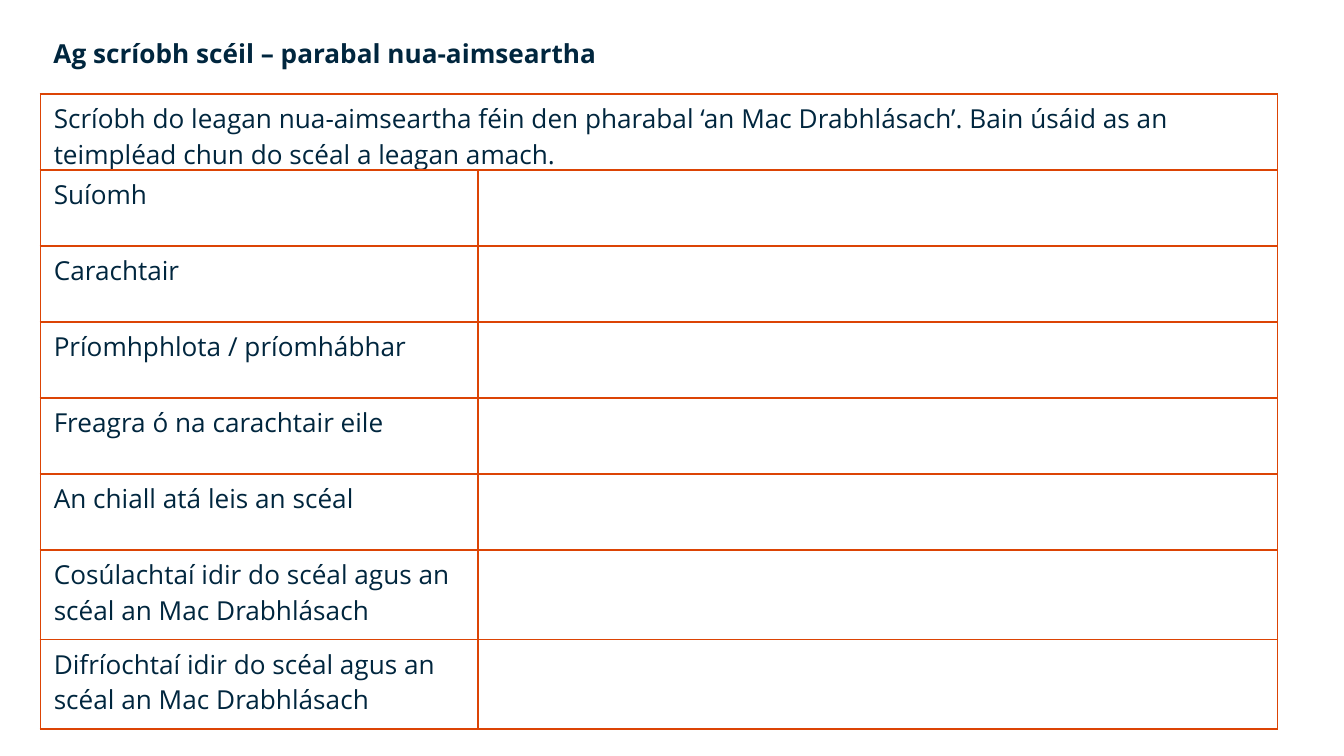
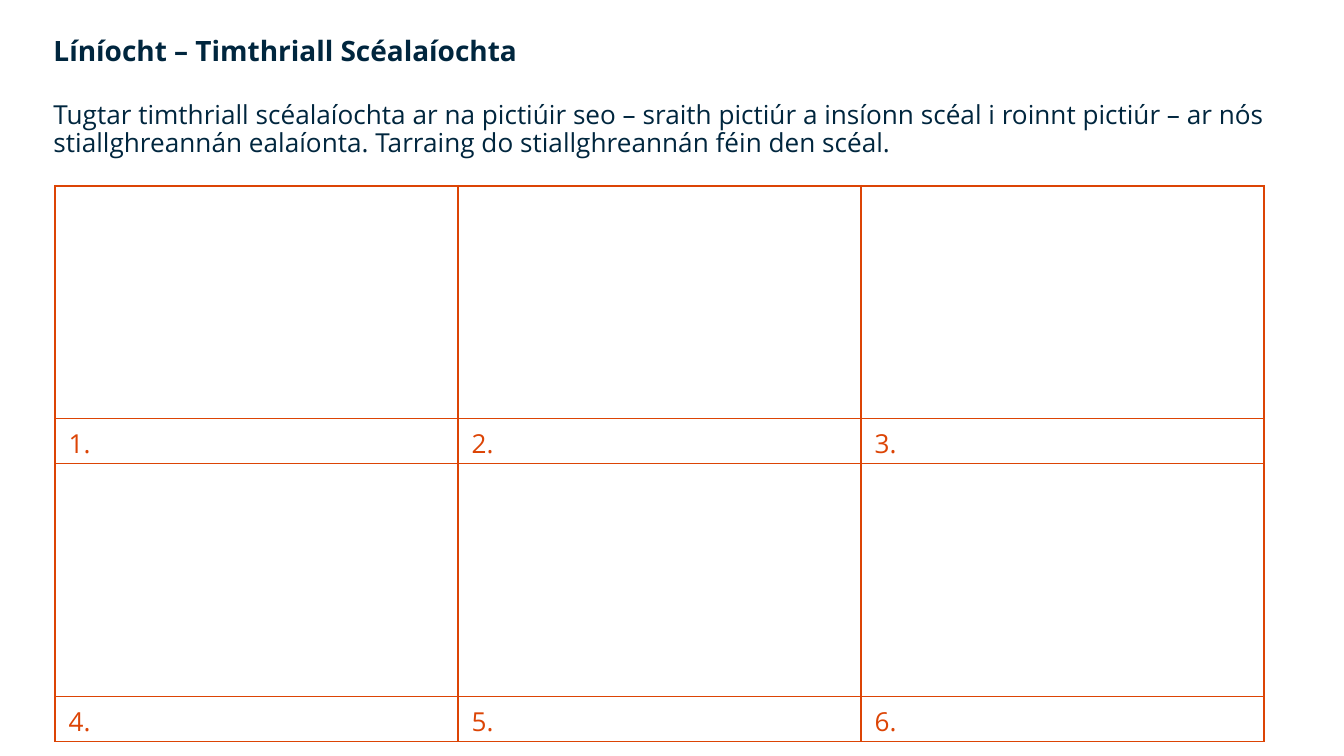
from dataclasses import dataclass

from lxml import etree
from pptx import Presentation
from pptx import util as u
from pptx.dml.color import RGBColor
from pptx.enum import text
from pptx.oxml.ns import qn


@dataclass(frozen=True)
class Theme:
    font: str = "Open Sans"
    navy: str = "00263E"
    orange: str = "DC4405"
    body: float = 14
    cycle_title: float = 15
    border: float = 1


theme = Theme()


def style_text(paragraph, size, color, bold=False):
    for run in paragraph.runs:
        run.font.name = theme.font
        run.font.size = u.Pt(size)
        run.font.bold = bold
        run.font.color.rgb = RGBColor.from_string(color)


def add_grid(slide, left, top, column_widths, row_heights, labels, color):
    table = slide.shapes.add_table(
        len(row_heights), len(column_widths), u.Pt(left), u.Pt(top),
        u.Pt(sum(column_widths)), u.Pt(sum(row_heights))).table
    table.first_row = table.horz_banding = False
    for column, width in zip(table.columns, column_widths):
        column.width = u.Pt(width)
    for row, height in zip(table.rows, row_heights):
        row.height = u.Pt(height)
    for cell in table.iter_cells():
        cell.margin_bottom = 0
        properties = cell._tc.get_or_add_tcPr()
        for side in ("a:lnL", "a:lnR", "a:lnT", "a:lnB"):
            line = etree.SubElement(properties, qn(side), w=str(u.Pt(theme.border)))
            fill = etree.SubElement(line, qn("a:solidFill"))
            etree.SubElement(fill, qn("a:srgbClr"), val=theme.orange)
        cell.fill.background()
    for (row, column), label in labels.items():
        cell = table.cell(row, column)
        cell.text_frame.text = label
        style_text(cell.text_frame.paragraphs[0], theme.body, color)
    return table


presentation = Presentation()
presentation.slide_width = u.Pt(720)
presentation.slide_height = u.Pt(405)

pages = [
    (360, 24.5, 1, [("Ag scríobh scéil – parabal nua-aimseartha", theme.body)]),
    (689, 95.8, 0.9, [
        ("Líníocht – Timthriall Scéalaíochta", theme.cycle_title),
        ("Tugtar timthriall scéalaíochta ar na pictiúir seo – sraith pictiúr a insíonn "
         "scéal i roinnt pictiúr – ar nós stiallghreannán ealaíonta. Tarraing do "
         "stiallghreannán féin den scéal.", theme.body),
    ]),
]
slides = []
for width, height, spacing, lines in pages:
    slide = presentation.slides.add_slide(presentation.slide_layouts[6])
    slides.append(slide)
    text_frame = slide.shapes.add_textbox(
        u.Pt(21.6), u.Pt(16.5), u.Pt(width), u.Pt(height)).text_frame
    text_frame.word_wrap = True
    text_frame.auto_size = text.MSO_AUTO_SIZE.SHAPE_TO_FIT_TEXT
    text_frame.text = "\n".join(line for line, size in lines)
    for index, (paragraph, (line, size)) in enumerate(zip(text_frame.paragraphs, lines)):
        paragraph.line_spacing = spacing
        if index:
            paragraph.space_before = u.Pt(18.4)
        style_text(paragraph, size, theme.navy, bold=index == 0)

story_slide, drawing_slide = slides

story_prompts = [
    "Scríobh do leagan nua-aimseartha féin den pharabal ‘an Mac Drabhlásach’. "
    "Bain úsáid as an teimpléad chun do scéal a leagan amach.",
    "Suíomh",
    "Carachtair",
    "Príomhphlota / príomhábhar",
    "Freagra ó na carachtair eile",
    "An chiall atá leis an scéal",
    "Cosúlachtaí idir do scéal agus an scéal an Mac Drabhlásach",
    "Difríochtaí idir do scéal agus an scéal an Mac Drabhlásach",
]
story_table = add_grid(
    story_slide, 21.6, 50.5, [234.6, 428.2], [40.7] * 6 + [48] * 2,
    {(row, 0): prompt for row, prompt in enumerate(story_prompts)}, theme.navy)
story_table.cell(0, 0).merge(story_table.cell(0, 1))

add_grid(
    drawing_slide, 29.6, 99.5, [215.9] * 3, [124.8, 24.1] * 2,
    {(1 + index // 3 * 2, index % 3): f"{index + 1}." for index in range(6)},
    theme.orange)

presentation.save("out.pptx")
